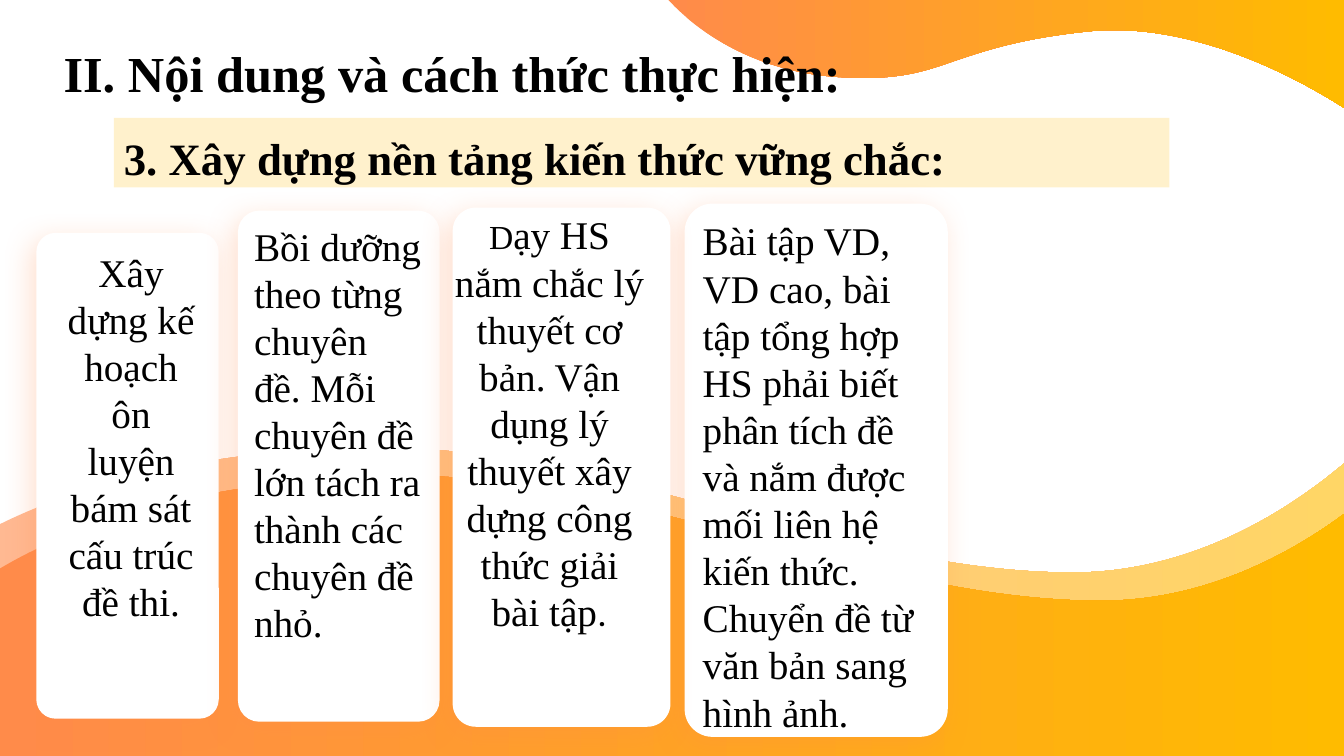
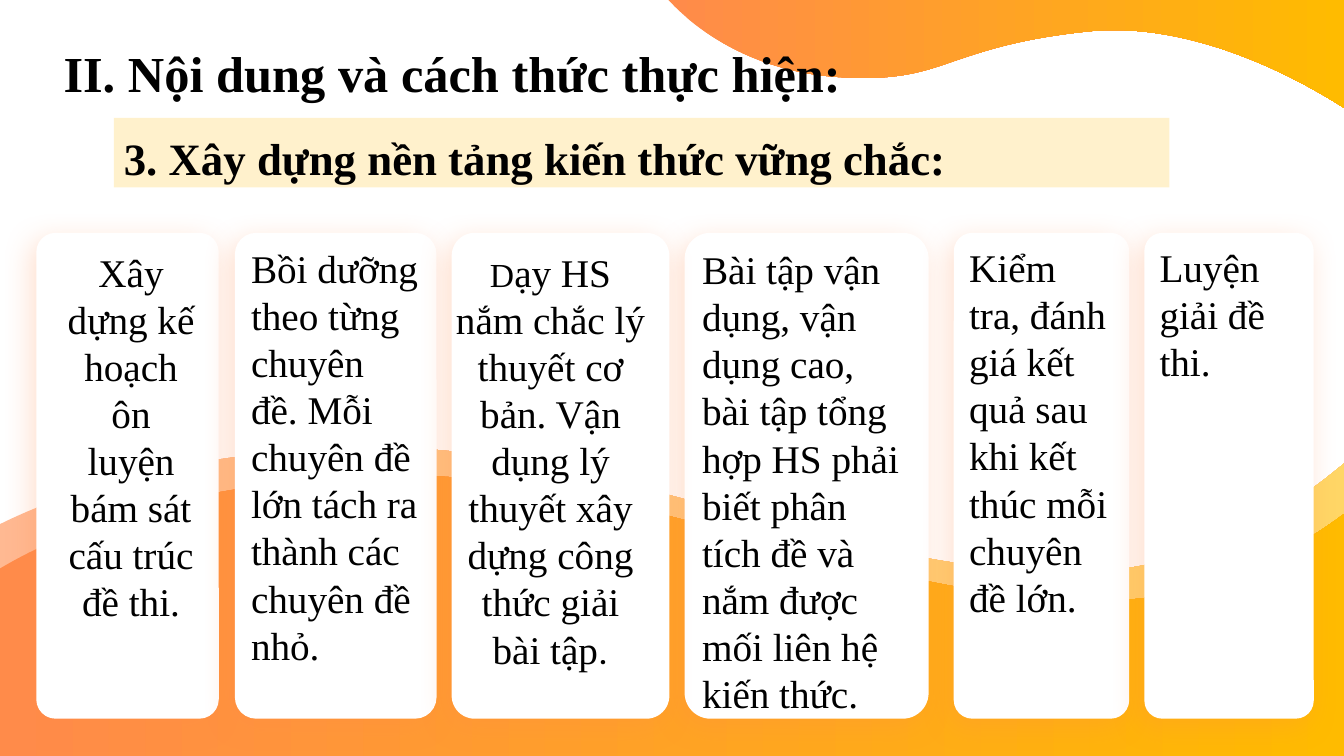
from lxml import etree
from pptx import Presentation
from pptx import util as u
from pptx.dml import color
from pptx.enum import shapes, text
from pptx.oxml import ns

FONT = "Times New Roman"
ORANGE, AMBER, CREAM, WHITE, BLACK = "FF8B4A", "FFBB00", "FFF1CC", "FFFFFF", "000000"
LEFT, CENTER, JUSTIFY = text.PP_ALIGN.LEFT, text.PP_ALIGN.CENTER, text.PP_ALIGN.JUSTIFY
TOP, BOTTOM = text.MSO_ANCHOR.TOP, text.MSO_ANCHOR.BOTTOM
WIDTH, HEIGHT = 13.33, 7.5
CARD_TOP, CARD_HEIGHT = 2.31, 4.82
BODY_LINE = u.Pt(33.65)

# Waves: start point, then lines (one point) and Bezier curves (three points)
LOWER_WAVE = [(13.33, 5.1), [(13.33, 7.5)], [(0, 7.5)], [(0, 5.64)],
              [(0.94, 5.08), (2.38, 4.72), (4.06, 4.72)],
              [(5.18, 4.72), (6.32, 5.03), (7.47, 5.34)],
              [(8.62, 5.65), (9.78, 5.96), (10.92, 5.96)],
              [(11.85, 5.96), (12.68, 5.58), (13.33, 5.1)]]
PALE_WAVE = [(13.33, 4.6), [(13.33, 7.5)], [(0, 7.5)], [(0, 5.2)],
             [(0.93, 4.74), (2.26, 4.44), (3.78, 4.44)],
             [(4.9, 4.44), (6.05, 4.75), (7.19, 5.06)],
             [(8.35, 5.37), (9.5, 5.68), (10.64, 5.68)],
             [(11.72, 5.68), (12.65, 5.17), (13.33, 4.6)]]
TOP_WAVE = [(13.33, 1.07), [(12.72, 0.68), (11.74, 0.22), (10.81, 0.31)],
            [(10.13, 0.38), (9.78, 0.5), (9.48, 0.6)],
            [(9.14, 0.72), (8.87, 0.81), (8.25, 0.76)],
            [(7.55, 0.7), (6.98, 0.38), (6.63, 0)], [(13.33, 0)], [(13.33, 1.07)]]

# Wording
TITLE = "II. Nội dung và cách thức thực hiện:"
SUBTITLE = "3. Xây dựng nền tảng kiến thức vững chắc:"
PLAN = "Xây dựng kế hoạch ôn luyện bám sát cấu trúc đề thi."
TOPICS = ("Bồi dưỡng theo từng chuyên đề. Mỗi chuyên đề lớn tách ra "
          "thành các chuyên đề nhỏ.")
THEORY = [("D", {"size": 24}),
          ("ạy HS nắm chắc lý thuyết cơ bản. Vận dụng lý thuyết xây dựng "
           "công thức giải bài tập", {}),
          (".", {"font": "Roboto"})]
EXERCISES_SHORT = ("Bài tập VD, VD cao, bài tập tổng hợp HS phải biết phân tích đề "
                   "và nắm được mối liên hệ kiến thức. Chuyển đề từ văn bản sang hình ảnh.")
EXERCISES = ("Bài tập vận dụng, vận dụng cao, bài tập tổng hợp HS phải biết phân tích đề "
             "và nắm được mối liên hệ kiến thức.")
TESTS = "Kiểm tra, đánh giá kết quả sau khi kết thúc mỗi chuyên đề lớn."
PRACTICE = "Luyện giải đề thi."


def rgb(value):
    return color.RGBColor.from_string(value)


def inches(box):
    return [u.Inches(v) for v in box]


def write(sp, content, size=28, bold=False, font=FONT, align=LEFT, anchor=TOP,
          spacing=BODY_LINE, inset=None):
    """Fill a shape with one paragraph: a string or a list of (text, format) runs."""
    tf = sp.text_frame
    tf.word_wrap = True
    tf.auto_size = text.MSO_AUTO_SIZE.NONE
    tf.vertical_anchor = anchor
    if inset is not None:
        tf.margin_left = tf.margin_right = tf.margin_top = tf.margin_bottom = u.Inches(inset)
    p = tf.paragraphs[0]
    p.alignment, p.line_spacing = align, spacing
    for words, style in [(content, {})] if isinstance(content, str) else content:
        r = p.add_run()
        r.text = words
        r.font.name = style.get("font", font)
        r.font.size = u.Pt(style.get("size", size))
        r.font.bold = bold
        r.font.color.rgb = rgb(BLACK)


def add_box(s, kind, box, fill):
    sp = s.shapes.add_shape(kind, *inches(box))
    sp.shadow.inherit = False
    sp.fill.solid()
    sp.fill.fore_color.rgb = rgb(fill)
    sp.line.fill.background()
    return sp


def add_glow(sp):
    """Give a card its soft orange shadow."""
    effects = sp._element.spPr.find(ns.qn("a:effectLst"))
    shadow = etree.SubElement(effects, ns.qn("a:outerShdw"), blurRad=str(u.Pt(20)),
                              dist=str(u.Pt(6)), dir=str(130 * 60000),
                              algn="ctr", rotWithShape="0")
    tint = etree.SubElement(shadow, ns.qn("a:srgbClr"), val=ORANGE)
    etree.SubElement(tint, ns.qn("a:alpha"), val="25000")


def bend(sp, parts):
    """Turn the segments that have control points into Bezier curves."""
    lines = list(sp._element.spPr.iter(ns.qn("a:lnTo")))
    for line, part in zip(lines, parts):
        if len(part) == 3:
            curve = etree.Element(ns.qn("a:cubicBezTo"))
            for x, y in part:
                etree.SubElement(curve, ns.qn("a:pt"), x=str(u.Inches(x) - sp.left),
                                 y=str(u.Inches(y) - sp.top))
            line.getparent().replace(line, curve)


def add_wave(s, layout, outline, opacity=100):
    """Draw a gradient wave and place it on the shared layout."""
    start, *parts = outline
    builder = s.shapes.build_freeform(*inches(start))
    builder.add_line_segments([inches(part[-1]) for part in parts], close=True)
    sp = builder.convert_to_shape()
    bend(sp, parts)
    sp.shadow.inherit = False
    sp.line.fill.background()
    sp.fill.gradient()
    sp.fill.gradient_angle = 0
    for stop, tint, position in zip(sp.fill.gradient_stops, (ORANGE, AMBER), (0, 1)):
        stop.color.rgb = rgb(tint)
        stop.position = position
    if opacity < 100:
        for tint in sp._element.spPr.iter(ns.qn("a:srgbClr")):
            etree.SubElement(tint, ns.qn("a:alpha"), val=str(opacity * 1000))
    layout.shapes.element.append(sp._element)


def add_heading(s):
    """Title and the cream band below it."""
    title = s.shapes.title
    title.left, title.top, title.width, title.height = inches((0.63, 0.2, 11.58, 0.82))
    write(title, TITLE, size=36, bold=True, anchor=BOTTOM, spacing=1.0, inset=0)
    band = add_box(s, shapes.MSO_SHAPE.RECTANGLE, (1.13, 1.17, 10.47, 0.69), CREAM)
    write(band, SUBTITLE, size=32, bold=True, align=JUSTIFY, spacing=1.14)


def add_card(s, content, left, width, top=CARD_TOP, height=CARD_HEIGHT, label=None):
    """Rounded card; label is the offset and size of a centred text box on it."""
    card = add_box(s, shapes.MSO_SHAPE.ROUNDED_RECTANGLE, (left, top, width, height), WHITE)
    card.adjustments[0] = 0.106
    add_glow(card)
    if label is None:
        write(card, content)
    else:
        dx, dy, w, h = label
        box = s.shapes.add_textbox(*inches((left + dx, top + dy, w, h)))
        write(box, content, align=CENTER, inset=0)


def add_slide(prs, layout, cards):
    s = prs.slides.add_slide(layout)
    add_heading(s)
    for card in cards:
        add_card(s, **card)
    return s


def main():
    prs = Presentation()
    prs.slide_width, prs.slide_height = inches((WIDTH, HEIGHT))
    layout = prs.slide_layouts[5]

    plan = dict(content=PLAN, left=0.36, width=1.81, label=(0.27, 0.15, 1.34, 4.29))
    first = add_slide(prs, layout, [
        plan,
        dict(content=TOPICS, left=2.36, width=2, top=2.09, height=5.07),
        dict(content=EXERCISES_SHORT, left=6.79, width=2.61, top=2.02, height=5.29),
        dict(content=THEORY, left=4.49, width=2.16, top=2.06, height=5.15,
             label=(0, 0.03, 1.92, 4.67)),
    ])
    add_slide(prs, layout, [
        plan,
        dict(content=TOPICS, left=2.33, width=2),
        dict(content=EXERCISES, left=6.79, width=2.42),
        dict(content=THEORY, left=4.48, width=2.16, label=(0.02, 0.15, 1.92, 4.67)),
        dict(content=TESTS, left=9.46, width=1.74),
        dict(content=PRACTICE, left=11.35, width=1.68),
    ])

    # Background shared by both slides
    add_wave(first, layout, LOWER_WAVE)
    add_wave(first, layout, PALE_WAVE, opacity=60)
    add_wave(first, layout, TOP_WAVE)
    prs.save("out.pptx")


if __name__ == "__main__":
    main()
